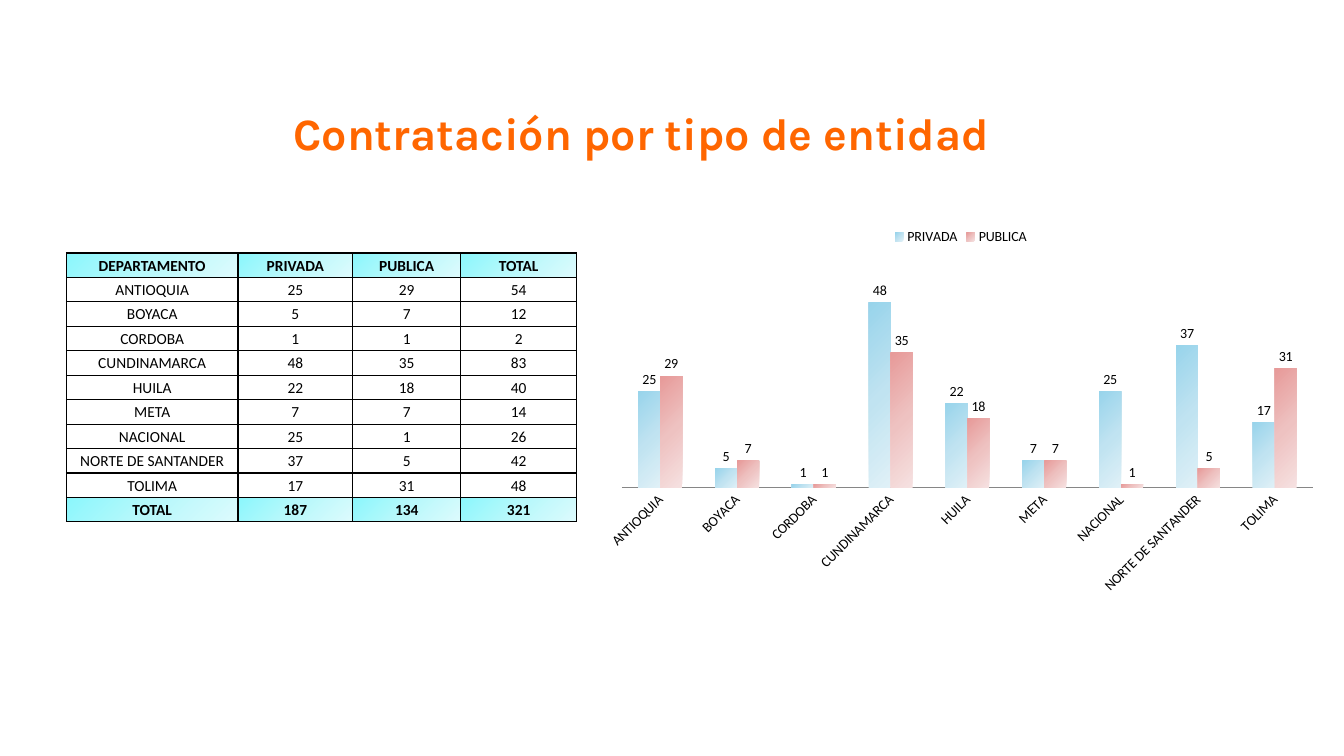
import pptx
import pptx.chart.data
import pptx.dml.color
import pptx.enum.chart
import pptx.enum.text
import pptx.oxml
import pptx.oxml.ns
import pptx.util

Inches = pptx.util.Inches
Pt = pptx.util.Pt

COLORS = {"title": "FF6600", "text": "000000", "border": "000000", "axis": "868686"}
GRADIENTS = {
    "table": ("8BF7FC", "B9F8FB", "DDFBFD"),
    "PRIVADA": ("98D4EB", "C0E3F1", "E0F1F7"),
    "PUBLICA": ("E79A99", "EEC2C1", "F6E1E1"),
}
CONTRACTS = {
    "ANTIOQUIA": (25, 29),
    "BOYACA": (5, 7),
    "CORDOBA": (1, 1),
    "CUNDINAMARCA": (48, 35),
    "HUILA": (22, 18),
    "META": (7, 7),
    "NACIONAL": (25, 1),
    "NORTE DE SANTANDER": (37, 5),
    "TOLIMA": (17, 31),
}
ENTITY_TYPES = ("PRIVADA", "PUBLICA")
COLUMN_WIDTHS = (1.7, 1.14, 1.07, 1.15)


def rgb(name):
    return pptx.dml.color.RGBColor.from_string(COLORS[name])


def format_font(font, name, size, color, bold=False):
    font.name = name
    font.size = Pt(size)
    font.bold = bold
    font.color.rgb = rgb(color)


def add_gradient(properties, name):
    stops = "".join(
        f'<a:gs pos="{position}"><a:srgbClr val="{color}"/></a:gs>'
        for position, color in zip((0, 50000, 100000), GRADIENTS[name])
    )
    properties.append(pptx.oxml.parse_xml(
        f'<a:gradFill {pptx.oxml.ns.nsdecls("a")} rotWithShape="1">'
        f'<a:gsLst>{stops}</a:gsLst><a:path path="circle">'
        '<a:fillToRect r="100000" b="100000"/></a:path></a:gradFill>'
    ))


def add_borders(properties):
    for side in ("lnL", "lnR", "lnT", "lnB"):
        properties.append(pptx.oxml.parse_xml(
            f'<a:{side} {pptx.oxml.ns.nsdecls("a")} w="{Pt(1)}"><a:solidFill>'
            f'<a:srgbClr val="{COLORS["border"]}"/></a:solidFill></a:{side}>'
        ))


def add_title(slide, text):
    title = slide.shapes.title
    title.left, title.top = Inches(1.99), Inches(1)
    title.width, title.height = Inches(8.75), Inches(0.64)
    title.text_frame.text = text
    title.text_frame.auto_size = pptx.enum.text.MSO_AUTO_SIZE.SHAPE_TO_FIT_TEXT
    paragraph = title.text_frame.paragraphs[0]
    paragraph.alignment = pptx.enum.text.PP_ALIGN.CENTER
    format_font(paragraph.font, "Karla", 32, "title", bold=True)


def format_cell(cell, text, emphasized):
    cell.text = str(text)
    cell.vertical_anchor = pptx.enum.text.MSO_ANCHOR.MIDDLE
    cell.margin_left = cell.margin_right = cell.margin_top = Inches(0.01)
    cell.margin_bottom = 0
    paragraph = cell.text_frame.paragraphs[0]
    paragraph.alignment = pptx.enum.text.PP_ALIGN.CENTER
    format_font(paragraph.font, "Calibri", 11, "text", bold=emphasized)
    properties = cell._tc.get_or_add_tcPr()
    add_borders(properties)
    if emphasized:
        add_gradient(properties, "table")
    else:
        cell.fill.background()


def add_contract_table(slide):
    rows = [("DEPARTAMENTO", *ENTITY_TYPES, "TOTAL")]
    rows += [(name, *values, sum(values)) for name, values in CONTRACTS.items()]
    totals = [sum(values) for values in zip(*CONTRACTS.values())]
    rows.append(("TOTAL", *totals, sum(totals)))
    table = slide.shapes.add_table(
        len(rows), len(COLUMN_WIDTHS),
        Inches(0.66), Inches(2.51), Inches(5.06), Inches(2.67),
    ).table
    for column, width in zip(table.columns, COLUMN_WIDTHS):
        column.width = Inches(width)
    for row_index, row in enumerate(rows):
        emphasized = row_index in (0, len(rows) - 1)
        for column_index, text in enumerate(row):
            format_cell(table.cell(row_index, column_index), text, emphasized)


def format_axes(chart):
    chart.value_axis.visible = False
    chart.value_axis.has_major_gridlines = False
    chart.value_axis.minimum_scale = 0
    axis = chart.category_axis
    axis.major_tick_mark = pptx.enum.chart.XL_TICK_MARK.NONE
    axis.format.line.color.rgb = rgb("axis")
    format_font(axis.tick_labels.font, "Calibri", 10, "text")
    axis._element.txPr.bodyPr.set("rot", "-2700000")


def format_series(series):
    series.invert_if_negative = False
    add_gradient(series._element.get_or_add_spPr(), series.name)
    labels = series.data_labels
    labels.show_value = True
    labels.position = pptx.enum.chart.XL_LABEL_POSITION.OUTSIDE_END


def add_contract_chart(slide):
    data = pptx.chart.data.CategoryChartData()
    data.categories = list(CONTRACTS)
    for name, values in zip(ENTITY_TYPES, zip(*CONTRACTS.values())):
        data.add_series(name, values)
    chart = slide.shapes.add_chart(
        pptx.enum.chart.XL_CHART_TYPE.COLUMN_CLUSTERED,
        Inches(5.89), Inches(2.16), Inches(7.28), Inches(3.81), data,
    ).chart
    format_font(chart.font, "Calibri", 10, "text")
    chart.has_title = False
    chart.has_legend = True
    chart.legend.position = pptx.enum.chart.XL_LEGEND_POSITION.TOP
    chart.legend.include_in_layout = False
    format_axes(chart)
    plot = chart.plots[0]
    plot.gap_width = 150
    plot.overlap = 0
    plot.vary_by_categories = False
    for series in plot.series:
        format_series(series)


def main():
    presentation = pptx.Presentation()
    presentation.slide_width = Inches(13.33)
    presentation.slide_height = Inches(7.5)
    slide = presentation.slides.add_slide(presentation.slide_layouts[5])
    add_contract_table(slide)
    add_contract_chart(slide)
    add_title(slide, "Contratación por tipo de entidad")
    presentation.save("out.pptx")


if __name__ == "__main__":
    main()
